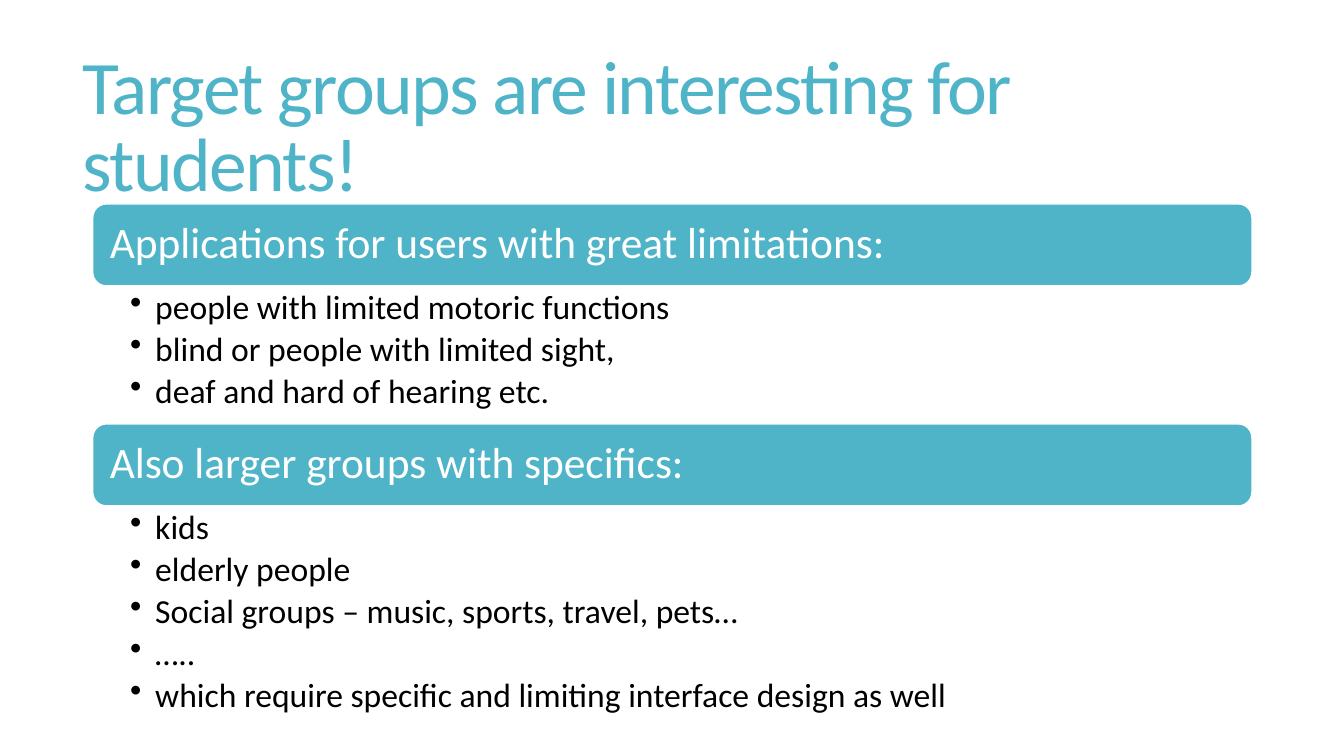
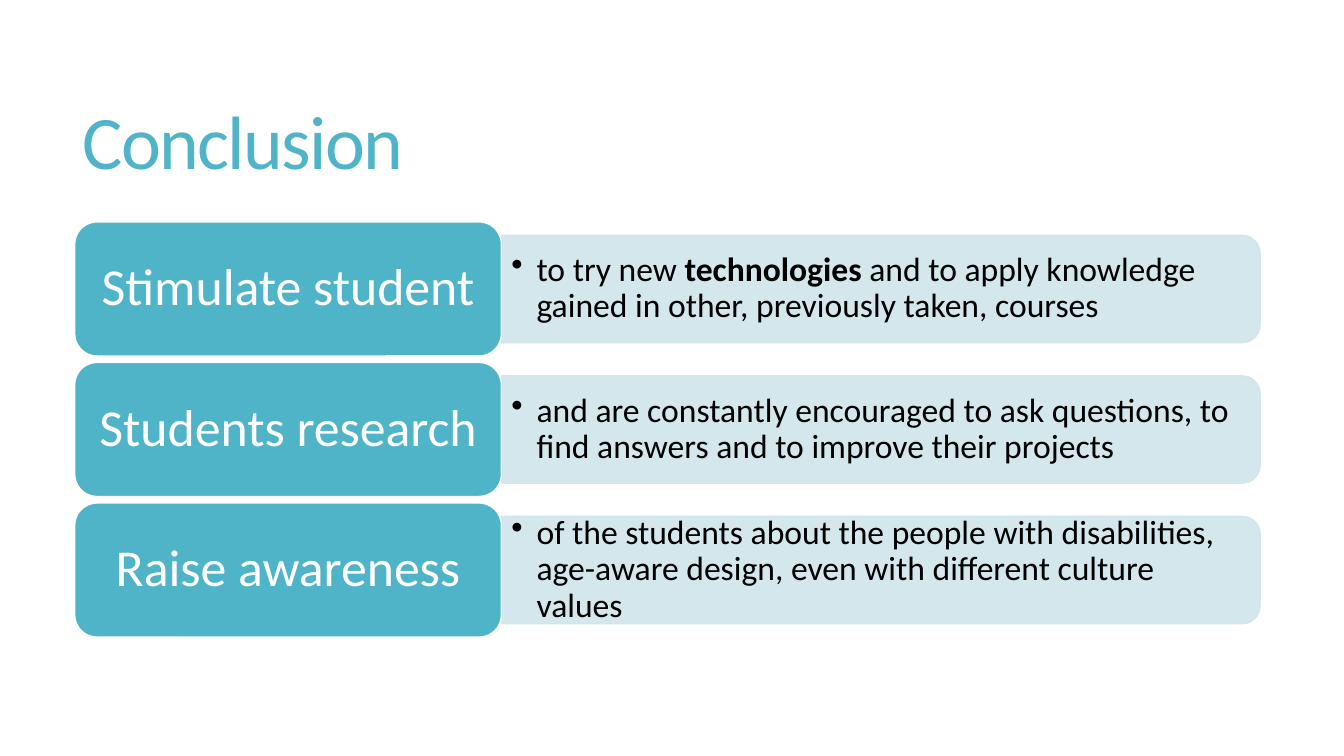
from lxml.etree import SubElement
from pptx import Presentation
from pptx.dml.color import RGBColor
from pptx.enum.shapes import MSO_SHAPE
from pptx.enum.text import MSO_ANCHOR, PP_ALIGN
from pptx.oxml.ns import qn
from pptx.util import Inches, Pt

TEAL = RGBColor(0x50, 0xB4, 0xC8)
PALE_TEAL = RGBColor(0xD0, 0xE5, 0xEB)
WHITE = RGBColor(0xFF, 0xFF, 0xFF)
BLACK = RGBColor(0x00, 0x00, 0x00)

deck = Presentation()
deck.slide_width = Inches(13.33)
deck.slide_height = Inches(7.5)
COLUMN = deck.slide_width / 100
ROW = deck.slide_height / 100
INDENT = Inches(0.25)

TITLE = {
    "frame": {"vertical_anchor": MSO_ANCHOR.MIDDLE},
    "para": {"line_spacing": 0.85},
    "font": {"size": Pt(54)},
    "colour": TEAL,
    "tracking": -120,
}
BAND = {
    "frame": {"vertical_anchor": MSO_ANCHOR.MIDDLE,
              "margin_left": Inches(0.13), "margin_right": Inches(0.13)},
    "para": {"line_spacing": 0.9, "alignment": PP_ALIGN.LEFT},
    "font": {"size": Pt(31)},
    "colour": WHITE,
}
CARD = {
    "frame": {"vertical_anchor": MSO_ANCHOR.MIDDLE,
              "margin_left": Inches(0.15), "margin_right": Inches(0.15)},
    "para": {"line_spacing": 0.9, "alignment": PP_ALIGN.CENTER},
    "font": {"size": Pt(37)},
    "colour": WHITE,
}
LIST = {
    "frame": {"vertical_anchor": MSO_ANCHOR.TOP,
              "margin_left": Inches(0.37), "margin_right": Inches(0.24),
              "margin_top": Inches(0.04), "margin_bottom": Inches(0.04)},
    "para": {"line_spacing": 0.9, "space_after": Pt(4.2)},
    "font": {"size": Pt(24)},
    "colour": BLACK,
    "bullet": "•",
}
DETAIL = LIST | {
    "frame": {"vertical_anchor": MSO_ANCHOR.MIDDLE},
    "para": {"line_spacing": 0.9},
}


def write(box, lines, style):
    frame = box.text_frame
    frame.word_wrap = True
    for name, value in style["frame"].items():
        setattr(frame, name, value)
    for number, spans in enumerate(lines):
        para = frame.add_paragraph() if number else frame.paragraphs[0]
        for name, value in style["para"].items():
            setattr(para, name, value)
        if "bullet" in style:
            properties = para._p.get_or_add_pPr()
            properties.set("marL", str(INDENT))
            properties.set("indent", str(-INDENT))
            SubElement(properties, qn("a:buChar"), char=style["bullet"])
        for position, text in enumerate(spans):
            span = para.add_run()
            span.text = text
            span.font.name = "Calibri"
            span.font.bold = position % 2 == 1
            span.font.color.rgb = style["colour"]
            for name, value in style["font"].items():
                setattr(span.font, name, value)
            if "tracking" in style:
                span._r.get_or_add_rPr().set("spc", str(style["tracking"]))


def add_panel(page, preset, area, fill, outline):
    panel = page.shapes.add_shape(preset, *map(round, area))
    panel.shadow.inherit = False
    panel.fill.solid()
    panel.fill.fore_color.rgb = fill
    panel.line.color.rgb = outline
    panel.line.width = Pt(1)
    return panel


pages = []
for heading, top in [("Target groups are interesting for students!", 5.07),
                     ("Conclusion", 7.33)]:
    page = deck.slides.add_slide(deck.slide_layouts[6])
    area = 5.4 * COLUMN, top * ROW, 88.35 * COLUMN, 24.13 * ROW
    write(page.shapes.add_textbox(*map(round, area)), [[heading]], TITLE)
    pages.append(page)
groups_page, conclusion_page = pages

groups = [
    ("Applications for users with great limitations:", 18.25, [
        "people with limited motoric functions",
        "blind or people with limited sight,",
        "deaf and hard of hearing etc.",
    ]),
    ("Also larger groups with specifics:", 30, [
        "kids",
        "elderly people",
        "Social groups – music, sports, travel, pets…",
        "…..",
        "which require specific and limiting interface design as well",
    ]),
]
left, width = 6.9 * COLUMN, 86.25 * COLUMN
top, band_height = 26.97 * ROW, 10.85 * ROW
for heading, list_rows, items in groups:
    band = add_panel(groups_page, MSO_SHAPE.ROUNDED_RECTANGLE,
                     (left, top, width, band_height), TEAL, WHITE)
    write(band, [[heading]], BAND)
    top += band_height
    area = left, top, width, list_rows * ROW
    box = groups_page.shapes.add_textbox(*map(round, area))
    write(box, [[item] for item in items], LIST)
    top += list_rows * ROW

goals = [
    ("Stimulate student",
     ["to try new ", "technologies",
      " and to apply knowledge gained in other, previously taken, courses"]),
    ("Students research",
     ["and are constantly encouraged to ask questions, to find answers "
      "and to improve their projects"]),
    ("Raise awareness",
     ["of the students about the people with disabilities, age-aware design, "
      "even with different culture values"]),
]
card_left, card_width, card_height = 5.56 * COLUMN, 31.75 * COLUMN, 17.73 * ROW
bar_left, bar_length, bar_height = card_left + card_width, 56.45 * COLUMN, 14.2 * ROW
detail_width, detail_height = 56 * COLUMN, 12.8 * ROW
for number, (goal, detail) in enumerate(goals):
    top = (29.36 + 18.59 * number) * ROW
    middle = top + card_height / 2
    area = (bar_left + (bar_length - bar_height) / 2, middle - bar_length / 2,
            bar_height, bar_length)
    bar = add_panel(conclusion_page, MSO_SHAPE.ROUND_2_SAME_RECTANGLE,
                    area, PALE_TEAL, PALE_TEAL)
    bar.rotation = 90
    for colour in bar._element.spPr.iter(qn("a:srgbClr")):
        SubElement(colour, qn("a:alpha"), val="90000")
    area = bar_left, middle - detail_height / 2, detail_width, detail_height
    box = conclusion_page.shapes.add_textbox(*map(round, area))
    write(box, [detail], DETAIL)
    card = add_panel(conclusion_page, MSO_SHAPE.ROUNDED_RECTANGLE,
                     (card_left, top, card_width, card_height), TEAL, WHITE)
    write(card, [[goal]], CARD)

deck.save("out.pptx")
